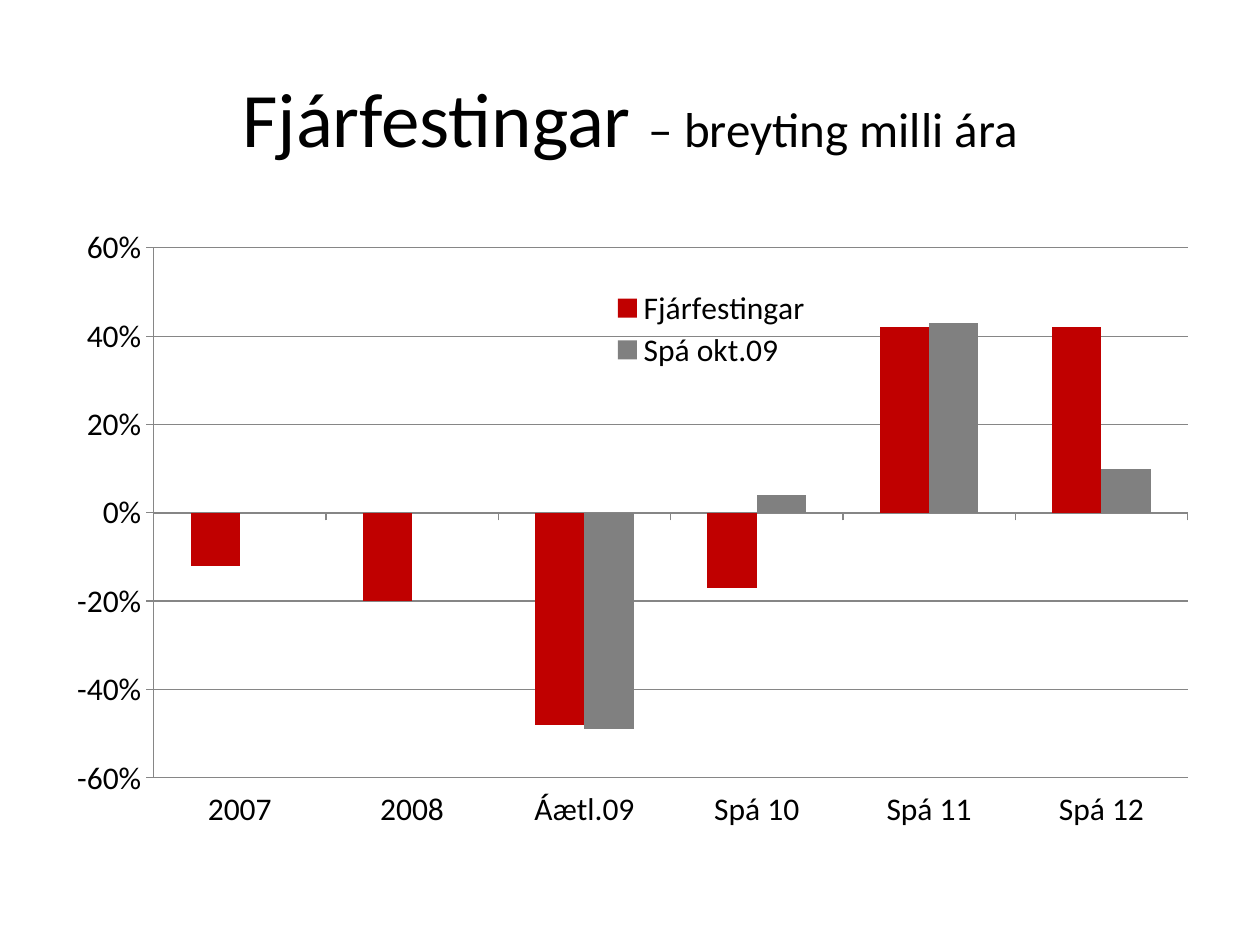
from pptx import Presentation
from pptx.chart.data import CategoryChartData
from pptx.dml.color import RGBColor
from pptx.enum.chart import XL_CHART_TYPE, XL_LEGEND_POSITION, XL_TICK_LABEL_POSITION, XL_TICK_MARK
from pptx.enum.text import MSO_ANCHOR, PP_ALIGN
from pptx.oxml import parse_xml
from pptx.oxml.ns import nsdecls, qn
from pptx.util import Cm, Pt

BLACK = RGBColor(0x00, 0x00, 0x00)
RED = RGBColor(0xC0, 0x00, 0x00)
GRAY = RGBColor(0x80, 0x80, 0x80)
AXIS_GRAY = RGBColor(0x86, 0x86, 0x86)
FONT = "Calibri"

TITLE = [("Fjárfestingar ", 44), ("– breyting milli ára", 28)]
CATEGORIES = ["2007", "2008", "Áætl.09", "Spá 10", "Spá 11", "Spá 12"]
SERIES = [
    ("Fjárfestingar", [-0.12, -0.2, -0.48, -0.17, 0.42, 0.42], RED),
    ("Spá okt.09", [None, None, -0.49, 0.04, 0.43, 0.1], GRAY),
]
PLOT_LAYOUT = {"x": 0.09, "y": 0.05, "w": 0.89, "h": 0.85}
LEGEND_LAYOUT = {"x": 0.48, "y": 0.11, "w": 0.18, "h": 0.14}


def set_layout(element, index, layout, target=""):
    for old in element.findall(qn("c:layout")):
        element.remove(old)
    modes = "".join(f'<c:{k}Mode val="edge"/>' for k in "xy")
    sizes = "".join(f'<c:{k} val="{v}"/>' for k, v in layout.items())
    element.insert(index, parse_xml(
        f'<c:layout {nsdecls("c")}><c:manualLayout>{target}{modes}{sizes}</c:manualLayout></c:layout>'))


def add_title(s):
    tf = s.shapes.add_textbox(Cm(1.27), Cm(0.76), Cm(22.86), Cm(3.18)).text_frame
    tf.word_wrap = True
    tf.vertical_anchor = MSO_ANCHOR.MIDDLE
    p = tf.paragraphs[0]
    p.alignment = PP_ALIGN.CENTER
    for text, size in TITLE:
        r = p.add_run()
        r.text = text
        r.font.name = FONT
        r.font.size = Pt(size)
        r.font.color.rgb = BLACK


def add_investment_chart(s):
    data = CategoryChartData(number_format="0%")
    data.categories = CATEGORIES
    for name, values, _ in SERIES:
        data.add_series(name, values)
    chart = s.shapes.add_chart(XL_CHART_TYPE.COLUMN_CLUSTERED, Cm(0.99), Cm(4.37),
                               Cm(23.42), Cm(12.57), data).chart
    chart.has_title = False
    chart.font.name = FONT
    chart.font.size = Pt(18)
    chart.font.color.rgb = BLACK

    plot = chart.plots[0]
    plot.vary_by_categories = False
    plot.gap_width = 150
    plot.overlap = 0
    for series, (_, _, color) in zip(plot.series, SERIES):
        series.invert_if_negative = False
        series.format.fill.solid()
        series.format.fill.fore_color.rgb = color

    cat, val = chart.category_axis, chart.value_axis
    cat.tick_label_position = XL_TICK_LABEL_POSITION.LOW
    val.minimum_scale, val.maximum_scale, val.major_unit = -0.6, 0.6, 0.2
    val.has_major_gridlines = True
    val.tick_labels.number_format = "0%"
    val.tick_labels.number_format_is_linked = False
    for axis in (cat, val):
        axis.major_tick_mark = XL_TICK_MARK.OUTSIDE
        axis.minor_tick_mark = XL_TICK_MARK.NONE
    for line in (cat.format.line, val.format.line, val.major_gridlines.format.line):
        line.color.rgb = AXIS_GRAY
        line.width = Pt(0.75)

    chart.has_legend = True
    legend = chart.legend
    legend.position = XL_LEGEND_POSITION.RIGHT
    legend.include_in_layout = True
    set_layout(legend._element, 1, LEGEND_LAYOUT)
    plot_area = chart._chartSpace.find(".//" + qn("c:plotArea"))
    set_layout(plot_area, 0, PLOT_LAYOUT, '<c:layoutTarget val="inner"/>')


def main():
    prs = Presentation()
    prs.slide_width, prs.slide_height = Cm(25.4), Cm(19.05)
    s = prs.slides.add_slide(prs.slide_layouts[6])
    add_title(s)
    add_investment_chart(s)
    prs.save("out.pptx")


if __name__ == "__main__":
    main()
